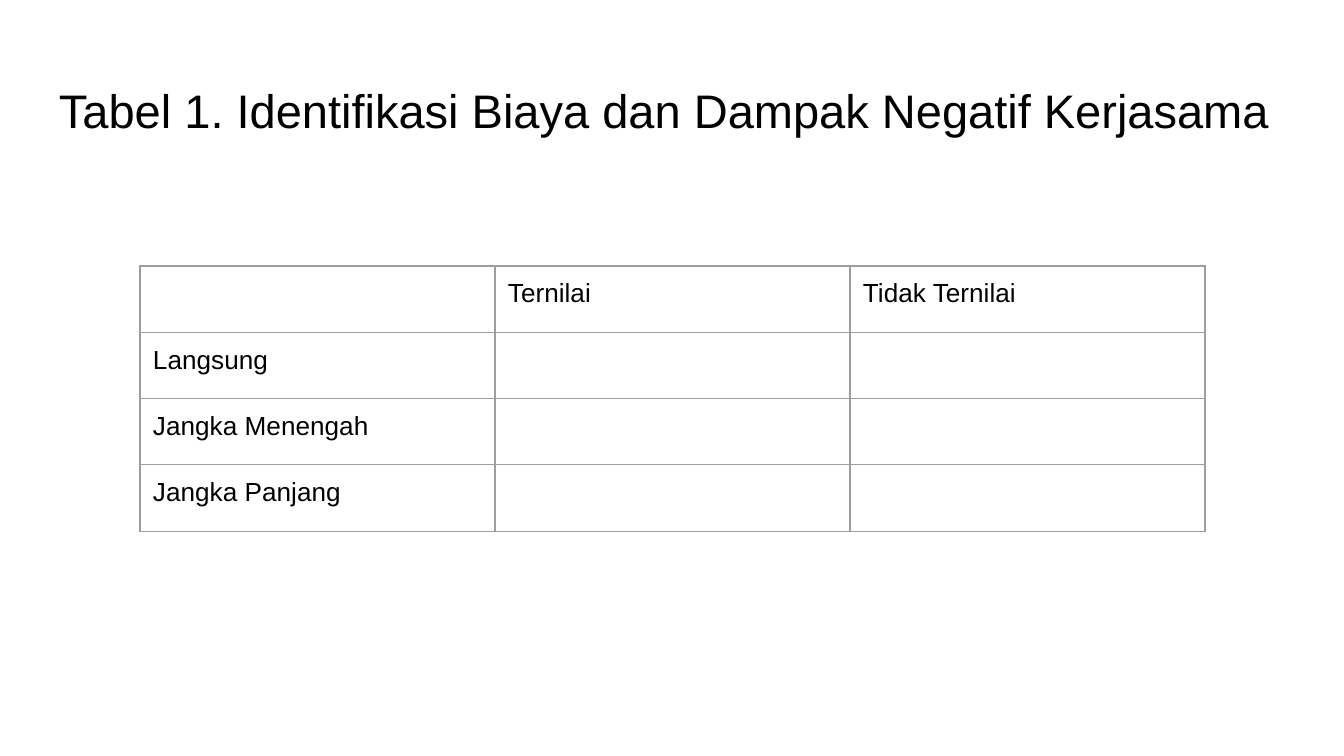
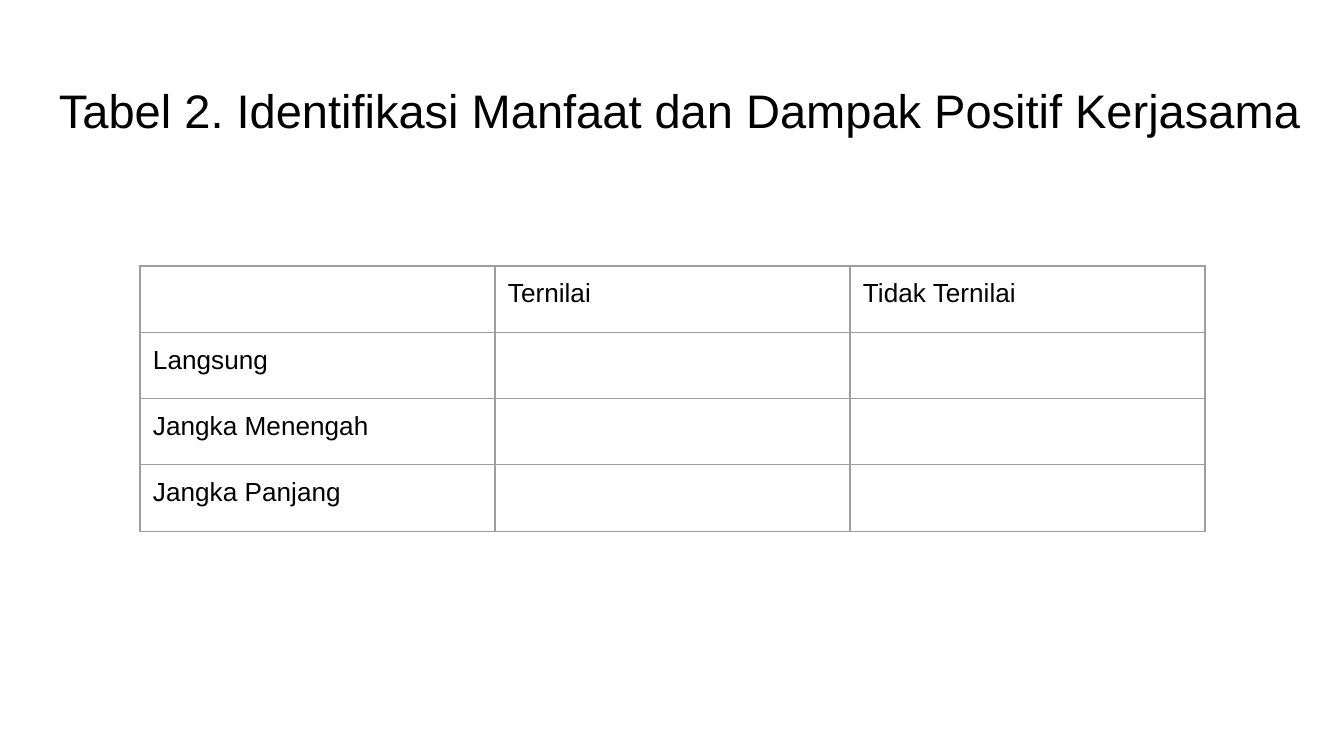
from pptx import Presentation
from pptx.dml.color import RGBColor
from pptx.enum.text import MSO_ANCHOR
from pptx.oxml import parse_xml
from pptx.oxml.ns import nsdecls
from pptx.util import Pt

SLIDES = [
    ("Tabel 1. Identifikasi Biaya dan Dampak Negatif Kerjasama", 1253),
    ("Tabel 2. Identifikasi Manfaat dan Dampak Positif Kerjasama", 1277),
]
COLUMNS = ["", "Ternilai", "Tidak Ternilai"]
ROWS = ["Langsung", "Jangka Menengah", "Jangka Panjang"]
GRID = [COLUMNS] + [[label, "", ""] for label in ROWS]

FONT, TEXT, BORDER, PAPER = "Arial", "000000", "9E9E9E", "FFFFFF"
SLIDE_W, SLIDE_H = 1344, 756
TITLE_X, TITLE_Y, TITLE_H = 46, 66, 85
TABLE_X, TABLE_Y, COL_W, ROW_H = 140, 266, 355, 56
INSET = 13
TITLE_PT, LABEL_PT, EMPTY_PT, BORDER_PT = 25.2, 14, 18, 0.75


def px(n):
    return round(n * 914400 / 134.4)


def rgb(color):
    return RGBColor.from_string(color)


def set_insets(box):
    box.margin_left = box.margin_right = px(INSET)
    box.margin_top = box.margin_bottom = px(INSET)


def write(p, text, size):
    if text:
        p.text = text
    else:
        p._p.append(parse_xml(
            f'<a:endParaRPr {nsdecls("a")} sz="{size * 100}">'
            f'<a:latin typeface="{FONT}"/></a:endParaRPr>'))
    p.font.name, p.font.size = FONT, Pt(size)
    p.font.color.rgb = rgb(TEXT)


def add_borders(cell):
    """Put the side lines before the fill, as the schema orders them."""
    for i, side in enumerate(("lnL", "lnR", "lnT", "lnB")):
        cell._tc.get_or_add_tcPr().insert(i, parse_xml(
            f'<a:{side} {nsdecls("a")} w="{Pt(BORDER_PT)}"><a:solidFill>'
            f'<a:srgbClr val="{BORDER}"/></a:solidFill></a:{side}>'))


def add_title(s, text, width):
    box = s.shapes.add_textbox(px(TITLE_X), px(TITLE_Y), px(width), px(TITLE_H))
    tf = box.text_frame
    tf.word_wrap = True
    tf.vertical_anchor = MSO_ANCHOR.BOTTOM
    set_insets(tf)
    write(tf.paragraphs[0], text, TITLE_PT)


def add_grid(s):
    n_rows, n_cols = len(GRID), len(COLUMNS)
    table = s.shapes.add_table(n_rows, n_cols, px(TABLE_X), px(TABLE_Y),
                               px(n_cols * COL_W), px(n_rows * ROW_H)).table
    table.first_row = table.horz_banding = False
    for row, labels in zip(table.rows, GRID):
        row.height = px(ROW_H)
        for cell, label in zip(row.cells, labels):
            set_insets(cell)
            cell.fill.background()
            add_borders(cell)
            write(cell.text_frame.paragraphs[0], label,
                  LABEL_PT if label else EMPTY_PT)


def main():
    prs = Presentation()
    prs.slide_width, prs.slide_height = px(SLIDE_W), px(SLIDE_H)
    for title, width in SLIDES:
        s = prs.slides.add_slide(prs.slide_layouts[6])
        s.background.fill.solid()
        s.background.fill.fore_color.rgb = rgb(PAPER)
        add_title(s, title, width)
        add_grid(s)
    prs.save("out.pptx")


if __name__ == "__main__":
    main()
